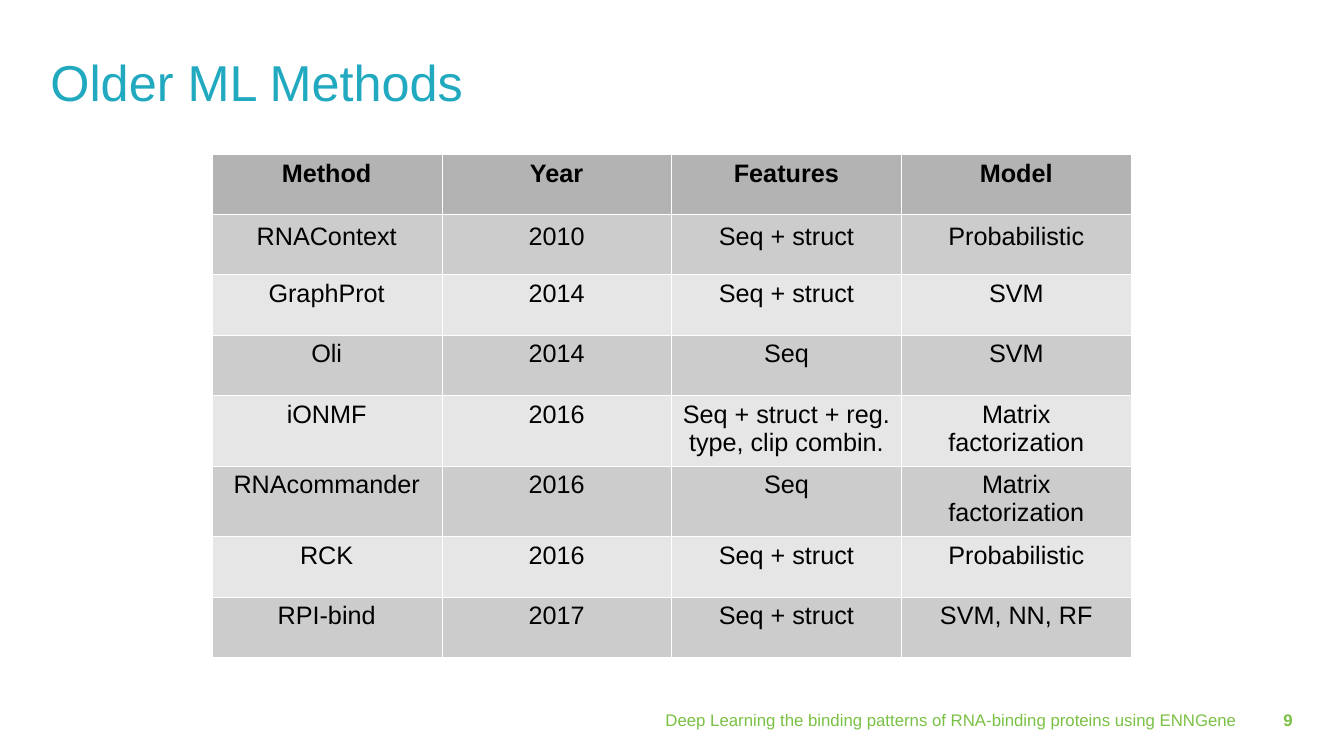
from lxml.etree import SubElement
from pptx import Presentation
from pptx.dml.color import RGBColor
from pptx.enum.text import MSO_ANCHOR as Anchor, PP_ALIGN as Align
from pptx.oxml.ns import qn
from pptx.util import Inches, Pt

TEAL = RGBColor(0x21, 0xA9, 0xC0)
GREEN = RGBColor(0x7A, 0xC1, 0x43)
BLACK = RGBColor(0, 0, 0)
HEADER_GREY = RGBColor(0xB3, 0xB3, 0xB3)
BANDS = (RGBColor(0xE6, 0xE6, 0xE6), RGBColor(0xCC, 0xCC, 0xCC))
FONT = "Arial"

TITLE = "Older ML Methods"
FOOTER = "Deep Learning the binding patterns of RNA-binding proteins using ENNGene"
PAGE = "9"
METHODS = [
    ("Method", "Year", "Features", "Model"),
    ("RNAContext", "2010", "Seq + struct", "Probabilistic"),
    ("GraphProt", "2014", "Seq + struct", "SVM"),
    ("Oli", "2014", "Seq", "SVM"),
    ("iONMF", "2016", "Seq + struct + reg. type, clip combin.", "Matrix factorization"),
    ("RNAcommander", "2016", "Seq", "Matrix factorization"),
    ("RCK", "2016", "Seq + struct", "Probabilistic"),
    ("RPI-bind", "2017", "Seq + struct", "SVM, NN, RF"),
]
ROW_HEIGHTS = (0.59, 0.6, 0.6, 0.6, 0.66, 0.66, 0.6, 0.6)
COLUMN_WIDTH = 2.28


def write(frame, text, size, color, align, bold=False, spacing=None):
    paragraph = frame.paragraphs[0]
    paragraph.alignment = align
    if spacing:
        paragraph.line_spacing = spacing
    run = paragraph.add_run()
    run.text = text
    font = run.font
    font.name, font.size, font.bold = FONT, Pt(size), bold
    font.color.rgb = color


def add_text(slide, place, anchor, *style, **options):
    frame = slide.shapes.add_textbox(*map(Inches, place)).text_frame
    frame.word_wrap = True
    frame.vertical_anchor = anchor
    frame.margin_left = frame.margin_right = 0
    frame.margin_top = frame.margin_bottom = 0
    write(frame, *style, **options)


def add_borders(cell):
    properties = cell._tc.get_or_add_tcPr()
    for side in ("a:lnL", "a:lnR", "a:lnT", "a:lnB"):
        line = SubElement(properties, qn(side), w=str(Pt(0.06)))
        fill = SubElement(line, qn("a:solidFill"))
        SubElement(fill, qn("a:srgbClr"), val="FFFFFF")


def add_methods(slide):
    columns = len(METHODS[0])
    table = slide.shapes.add_table(
        len(METHODS), columns, Inches(2.1), Inches(1.53),
        Inches(COLUMN_WIDTH * columns), Inches(sum(ROW_HEIGHTS))).table
    for column in table.columns:
        column.width = Inches(COLUMN_WIDTH)
    for r, (values, height) in enumerate(zip(METHODS, ROW_HEIGHTS)):
        table.rows[r].height = Inches(height)
        for c, value in enumerate(values):
            cell = table.cell(r, c)
            add_borders(cell)
            cell.fill.solid()
            cell.fill.fore_color.rgb = BANDS[r % 2] if r else HEADER_GREY
            write(cell.text_frame, value, 18, BLACK, Align.CENTER,
                  bold=r == 0, spacing=1.15 if r == 1 else None)


def main():
    deck = Presentation()
    deck.slide_width, deck.slide_height = Inches(13.33), Inches(7.5)
    slide = deck.slides.add_slide(deck.slide_layouts[6])
    add_text(slide, (12.27, 7.01, 0.55, 0.23), Anchor.BOTTOM,
             PAGE, 12, GREEN, Align.RIGHT, bold=True)
    add_text(slide, (0.5, 0.4, 7.1, 0.9), Anchor.MIDDLE,
             TITLE, 36, TEAL, Align.LEFT, spacing=0.9)
    add_text(slide, (3.65, 7.01, 8.62, 0.23), Anchor.BOTTOM,
             FOOTER, 12, GREEN, Align.RIGHT)
    add_methods(slide)
    deck.save("out.pptx")


if __name__ == "__main__":
    main()
